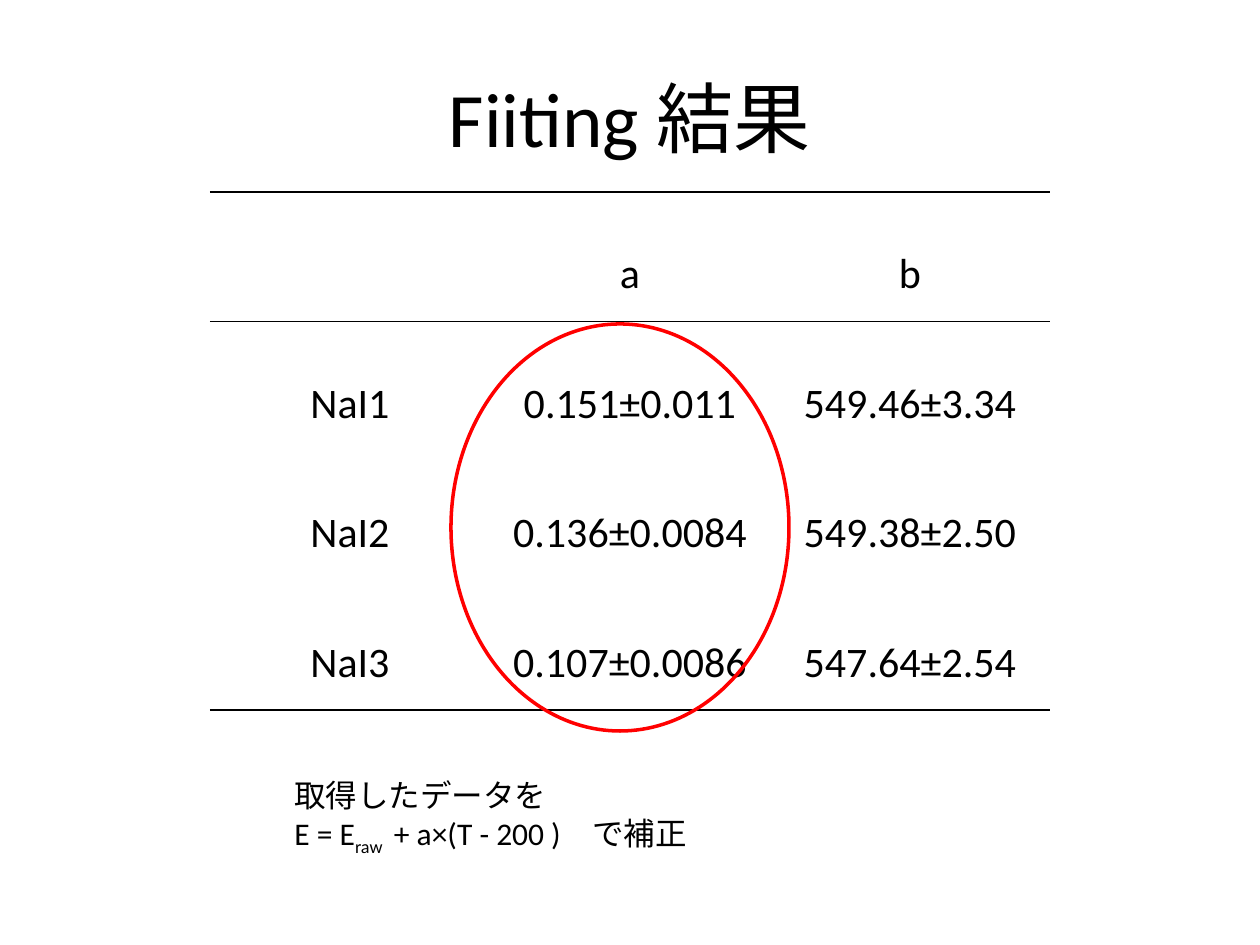
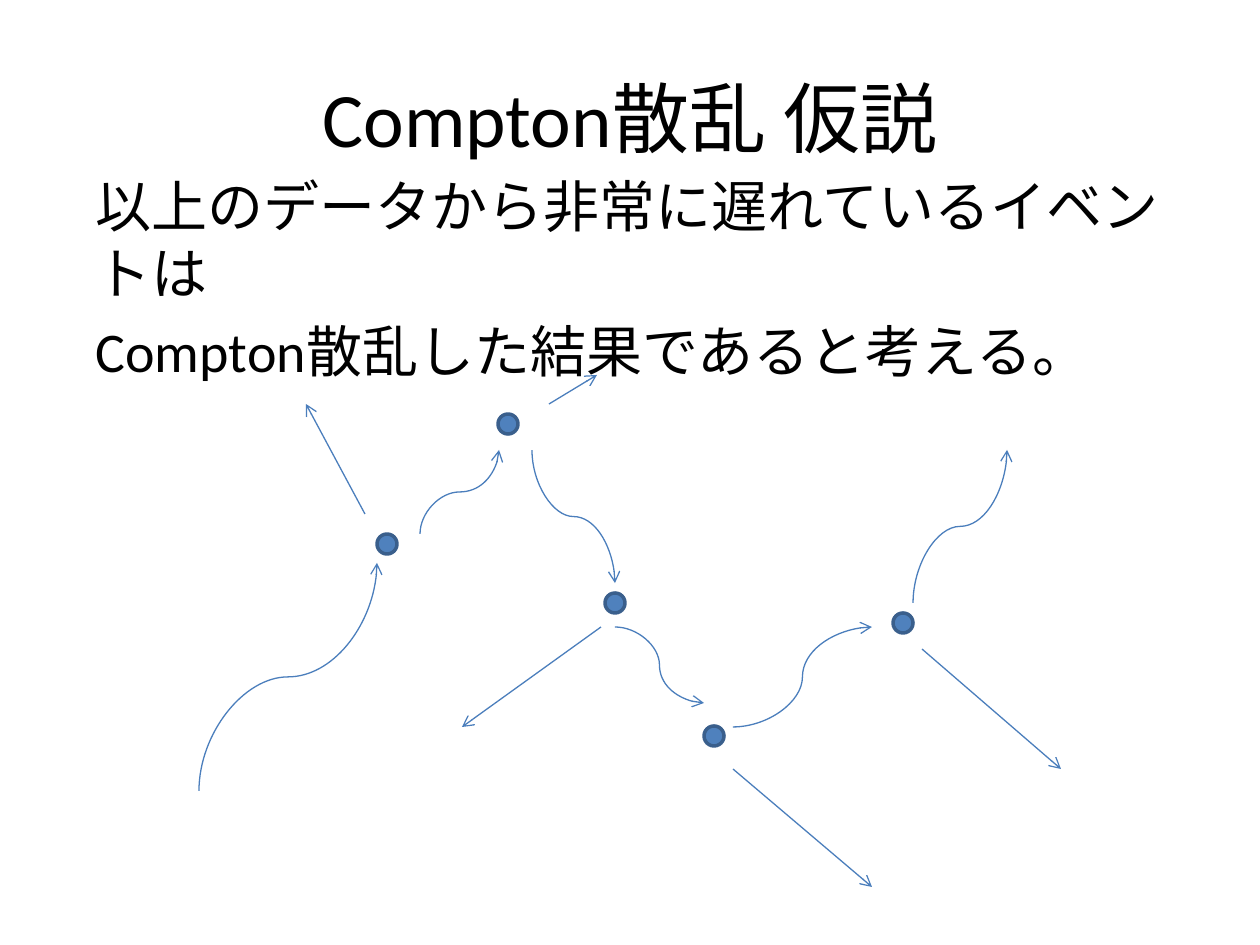
import lxml.etree
import pptx
import pptx.dml.color
import pptx.enum.lang
import pptx.enum.shapes
import pptx.enum.text
import pptx.oxml
import pptx.oxml.ns
import pptx.util

PX_PER_INCH = 126
SLIDE_WIDTH, SLIDE_HEIGHT = 1260, 945
TITLE_ONLY, TITLE_AND_BODY = 5, 1
BLACK, RED = "000000", "FF0000"
ARROW_BLUE, DOT_FILL, DOT_EDGE = "4B7EBC", "4F81BD", "3A5F8C"


def emu(px):
    return pptx.util.Emu(round(px * pptx.util.Inches(1) / PX_PER_INCH))


def colour(value):
    return pptx.dml.color.RGBColor.from_string(value)


def add_element(parent, tag, index=None, **attributes):
    element = pptx.oxml.parse_xml(f"<a:{tag} {pptx.oxml.ns.nsdecls('a')}/>")
    for name, value in attributes.items():
        element.set(name, str(value))
    parent.insert(len(parent) if index is None else index, element)
    return element


class SlideBuilder:
    font_name = "Calibri"
    title_size, body_size, table_size, note_size = 44, 32, 24, 18
    dot_size = 20

    def __init__(self):
        self.deck = pptx.Presentation()
        self.deck.slide_width = emu(SLIDE_WIDTH)
        self.deck.slide_height = emu(SLIDE_HEIGHT)
        self.page = None

    def new_page(self, layout, title):
        self.page = self.deck.slides.add_slide(self.deck.slide_layouts[layout])
        box = self.page.shapes.title
        self.place(box, 63, 38, 1134, 158)
        box.text_frame.text = title
        box.text_frame.vertical_anchor = pptx.enum.text.MSO_ANCHOR.MIDDLE
        self.format_text(box.text_frame, self.title_size, centred=True)

    def place(self, box, left, top, width, height):
        box.left, box.top = emu(left), emu(top)
        box.width, box.height = emu(width), emu(height)

    def format_text(self, frame, size, centred=False):
        align = pptx.enum.text.PP_ALIGN
        for para in frame.paragraphs:
            para.alignment = align.CENTER if centred else align.LEFT
            for span in para.runs:
                span.font.name = self.font_name
                span.font.size = pptx.util.Pt(size)
                span.font.color.rgb = colour(BLACK)
                span.font.language_id = pptx.enum.lang.MSO_LANGUAGE_ID.JAPANESE

    def body(self, text, left, top, width, height):
        box = self.page.placeholders[1]
        self.place(box, left, top, width, height)
        box.text_frame.text = text
        box.text_frame.auto_size = pptx.enum.text.MSO_AUTO_SIZE.NONE
        self.format_text(box.text_frame, self.body_size)
        for para in box.text_frame.paragraphs:
            properties = para._p.get_or_add_pPr()
            properties.set("marL", "0")
            properties.set("indent", "0")
            add_element(properties, "buNone")

    def note(self, lines, left, top, width, height):
        box = self.page.shapes.add_textbox(emu(left), emu(top), emu(width), emu(height))
        frame = box.text_frame
        frame.word_wrap = True
        for index, spans in enumerate(lines):
            para = frame.add_paragraph() if index else frame.paragraphs[0]
            for text, baseline in spans:
                span = para.add_run()
                span.text = text
                if baseline:
                    span._r.get_or_add_rPr().set("baseline", str(baseline))
        self.format_text(frame, self.note_size)

    def cell_borders(self, cell, ruled_sides):
        properties = cell._tc.get_or_add_tcPr()
        for index, side in enumerate(("lnL", "lnR", "lnT", "lnB")):
            line = add_element(properties, side, index, w=pptx.util.Pt(1))
            if side in ruled_sides:
                add_element(add_element(line, "solidFill"), "srgbClr", val=BLACK)
            else:
                add_element(line, "noFill")

    def table(self, rows, left, top, width, height):
        frame = self.page.shapes.add_table(
            len(rows), len(rows[0]), emu(left), emu(top), emu(width), emu(height))
        table = frame.table
        table.first_row = table.horz_banding = False
        for row_index, row in enumerate(rows):
            ruled_sides = {
                0: ("lnT", "lnB"), 1: ("lnT",), len(rows) - 1: ("lnB",),
            }.get(row_index, ())
            for column_index, text in enumerate(row):
                cell = table.cell(row_index, column_index)
                cell.text = text
                cell.margin_top = emu(57)
                cell.fill.background()
                self.format_text(cell.text_frame, self.table_size, centred=True)
                self.cell_borders(cell, ruled_sides)

    def ellipse(self, left, top, width, height, edge, fill=None):
        shape = self.page.shapes.add_shape(
            pptx.enum.shapes.MSO_SHAPE.OVAL,
            emu(left), emu(top), emu(width), emu(height))
        shape.shadow.inherit = False
        shape.line.color.rgb = colour(edge)
        shape.line.width = pptx.util.Pt(2)
        if fill:
            shape.fill.solid()
            shape.fill.fore_color.rgb = colour(fill)
        else:
            shape.fill.background()

    def dot(self, x, y):
        radius = self.dot_size // 2
        self.ellipse(x - radius, y - radius, self.dot_size, self.dot_size,
                     DOT_EDGE, DOT_FILL)

    def arrow(self, x1, y1, x2, y2, curved=False):
        kinds = pptx.enum.shapes.MSO_CONNECTOR
        connector = self.page.shapes.add_connector(
            kinds.CURVE if curved else kinds.STRAIGHT,
            emu(x1), emu(y1), emu(x2), emu(y2))
        connector.line.color.rgb = colour(ARROW_BLUE)
        connector.line.width = pptx.util.Pt(0.75)
        add_element(connector.line._get_or_add_ln(), "tailEnd", type="arrow")
        add_element(connector._element.spPr, "effectLst")
        return connector

    def upright_curve(self, x1, y1, x2, y2):
        middle_x, middle_y = (x1 + x2) / 2, (y1 + y2) / 2
        half_x, half_y = (x2 - x1) / 2, (y2 - y1) / 2
        connector = self.arrow(middle_x - half_y, middle_y + half_x,
                               middle_x + half_y, middle_y - half_x, curved=True)
        connector.rotation = 90


def build_fitting_results(builder):
    builder.new_page(TITLE_ONLY, "Fiiting 結果")
    builder.table([
        ("", "a", "b"),
        ("NaI1", "0.151±0.011", "549.46±3.34"),
        ("NaI2", "0.136±0.0084", "549.38±2.50"),
        ("NaI3", "0.107±0.0086", "547.64±2.54"),
    ], 210, 192, 840, 518)
    builder.ellipse(451, 324, 338, 407, RED)
    builder.note([
        [("取得したデータを", 0)],
        [("E = E", 0), ("raw ", -25000), (" + a×(T - 200 )　で補正", 0)],
    ], 282, 770, 665, 89)


def build_compton_hypothesis(builder):
    builder.new_page(TITLE_AND_BODY, "Compton散乱 仮説")
    builder.body("以上のデータから非常に遅れているイベントは\n"
                 "Compton散乱した結果であると考える。", 83, 165, 1134, 193)
    electron_tracks = [
        (549, 404, 597, 375), (365, 514, 306, 404), (601, 627, 462, 727),
        (733, 769, 872, 887), (922, 649, 1061, 769),
    ]
    upright_photons = [
        (199, 791, 377, 563), (420, 534, 499, 450),
        (532, 450, 615, 583), (913, 603, 1007, 450),
    ]
    level_photons = [(615, 627, 704, 703), (733, 727, 872, 627)]
    scatter_points = [(387, 544), (508, 424), (615, 603), (714, 736), (903, 623)]
    for track in electron_tracks:
        builder.arrow(*track)
    for photon in upright_photons:
        builder.upright_curve(*photon)
    for photon in level_photons:
        builder.arrow(*photon, curved=True)
    for point in scatter_points:
        builder.dot(*point)


def main():
    builder = SlideBuilder()
    build_fitting_results(builder)
    build_compton_hypothesis(builder)
    builder.deck.save("out.pptx")


if __name__ == "__main__":
    main()
